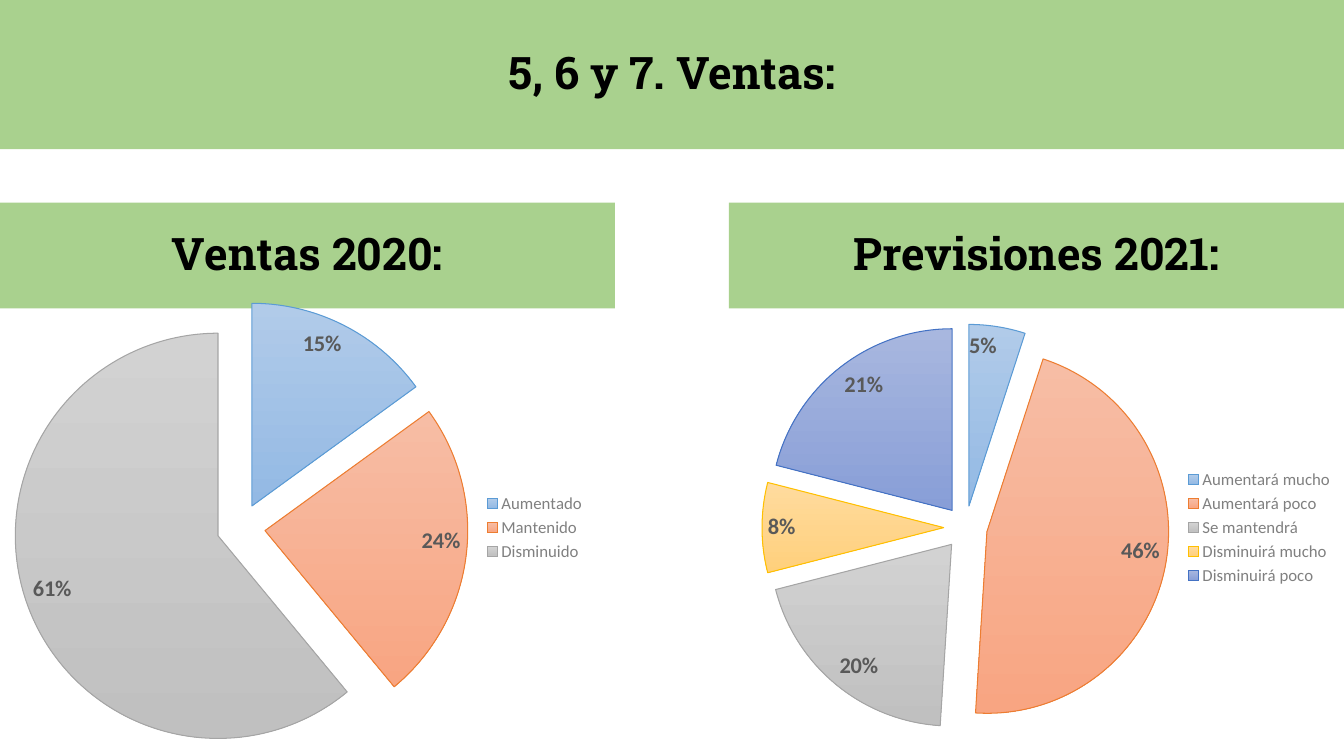
import pptx
import pptx.util
import pptx.chart.data
import pptx.dml.color
import pptx.enum.chart
import pptx.enum.shapes
import pptx.enum.text
from pptx.oxml.xmlchemy import OxmlElement

WIDE, HIGH = 13.33, 7.5
BAND, PIE = 6.1, 5.91

HUES = {
    "paper": "FFFFFF",
    "green": "A9D18E",
    "ink": "000000",
    "label": "595959",
    "legend": "808080",
}
SLICES = [
    {"top": "B1CBE9", "base": "93B9E4", "edge": "5B9BD5"},
    {"top": "F7BDA5", "base": "F8A582", "edge": "ED7D31"},
    {"top": "D2D2D2", "base": "C0C0C0", "edge": "A5A5A5"},
    {"top": "FFDB9E", "base": "FFD07C", "edge": "FFC000"},
    {"top": "A8B7DF", "base": "889ED7", "edge": "4472C4"},
]
SALES = {"Aumentado": 15, "Mantenido": 24, "Disminuido": 61}
PLANS = {
    "Aumentará mucho": 5,
    "Aumentará poco": 46,
    "Se mantendrá": 20,
    "Disminuirá mucho": 8,
    "Disminuirá poco": 21,
}


def tint(code):
    return pptx.dml.color.RGBColor.from_string(code)


def box(*sides):
    return [pptx.util.Inches(side) for side in sides]


def style(font, face, size, hue, bold=False):
    font.name = face
    font.size = pptx.util.Pt(size)
    font.bold = bold
    font.color.rgb = tint(HUES[hue])


def dress(shape, text):
    shape.fill.solid()
    shape.fill.fore_color.rgb = tint(HUES["green"])
    shape.line.fill.background()
    frame = shape.text_frame
    frame.text = text
    frame.word_wrap = True
    frame.auto_size = pptx.enum.text.MSO_AUTO_SIZE.NONE
    frame.vertical_anchor = pptx.enum.text.MSO_ANCHOR.MIDDLE
    line = frame.paragraphs[0]
    line.alignment = pptx.enum.text.PP_ALIGN.CENTER
    line.line_spacing = 0.9
    style(line.font, "Roboto Slab", 32, "ink", True)


def head(slide, text):
    title = slide.shapes.title
    title.left, title.top, title.width, title.height = box(0, 0, WIDE, 1.48)
    dress(title, text)


def band(slide, left, text):
    kind = pptx.enum.shapes.MSO_SHAPE.RECTANGLE
    shape = slide.shapes.add_shape(kind, *box(left, 2.01, BAND, 1.05))
    shape.shadow.inherit = False
    dress(shape, text)


def paint(point, hues):
    fill = point.format.fill
    fill.gradient()
    fill.gradient_angle = 270
    for stop, key in zip(fill.gradient_stops, ("top", "base")):
        stop.color.rgb = tint(hues[key])
    line = point.format.line
    line.color.rgb = tint(hues["edge"])
    line.width = pptx.util.Pt(0.75)


def split(series, share):
    node = OxmlElement("c:explosion")
    node.set("val", str(share))
    series._element.find(pptx.oxml.ns.qn("c:dPt")).addprevious(node)


def pie(slide, left, shares):
    data = pptx.chart.data.CategoryChartData()
    data.categories = list(shares)
    data.add_series("Series 1", list(shares.values()))
    kind = pptx.enum.chart.XL_CHART_TYPE.PIE
    chart = slide.shapes.add_chart(kind, *box(left, 2.53, PIE, 5.41), data).chart
    style(chart.font, "Calibri", 10, "ink")
    chart.has_title = False
    chart.has_legend = True
    chart.legend.position = pptx.enum.chart.XL_LEGEND_POSITION.RIGHT
    chart.legend.include_in_layout = False
    style(chart.legend.font, "Calibri", 12, "legend")
    plot = chart.plots[0]
    plot.vary_by_categories = True
    series = plot.series[0]
    for spot, hues in zip(range(len(shares)), SLICES):
        paint(series.points[spot], hues)
    split(series, 12)
    plot.has_data_labels = True
    labels = plot.data_labels
    labels.show_value = False
    labels.show_percentage = True
    labels.number_format = "0%"
    labels.number_format_is_linked = False
    labels.position = pptx.enum.chart.XL_LABEL_POSITION.INSIDE_END
    style(labels.font, "Calibri", 16, "label", True)


def main():
    deck = pptx.Presentation()
    deck.slide_width, deck.slide_height = box(WIDE, HIGH)
    slide = deck.slides.add_slide(deck.slide_layouts[5])
    slide.background.fill.solid()
    slide.background.fill.fore_color.rgb = tint(HUES["paper"])
    head(slide, "5, 6 y 7. Ventas:")
    band(slide, 0, "Ventas 2020:")
    band(slide, WIDE - BAND, "Previsiones 2021:")
    pie(slide, 0, SALES)
    pie(slide, WIDE - PIE, PLANS)
    deck.save("out.pptx")


if __name__ == "__main__":
    main()
